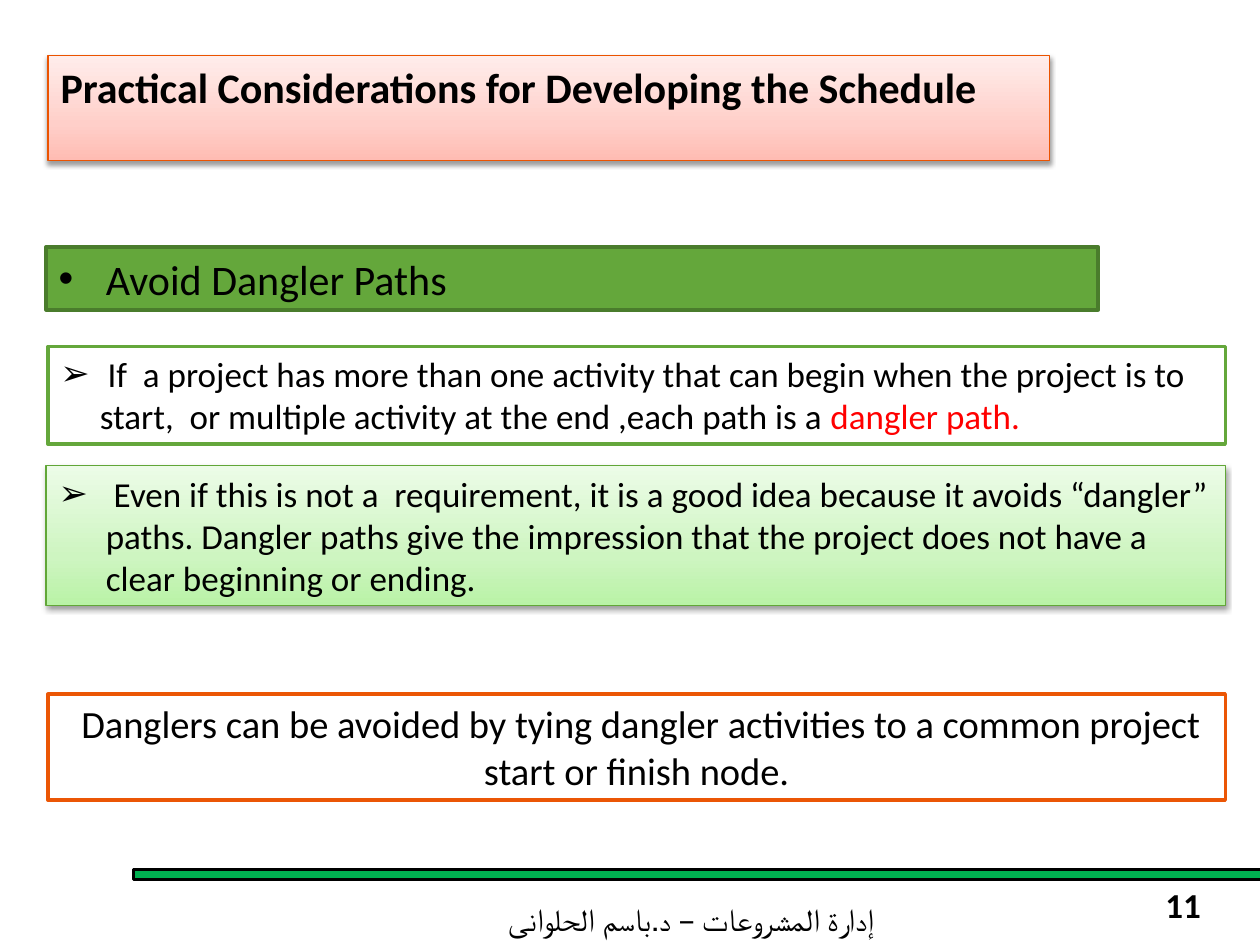
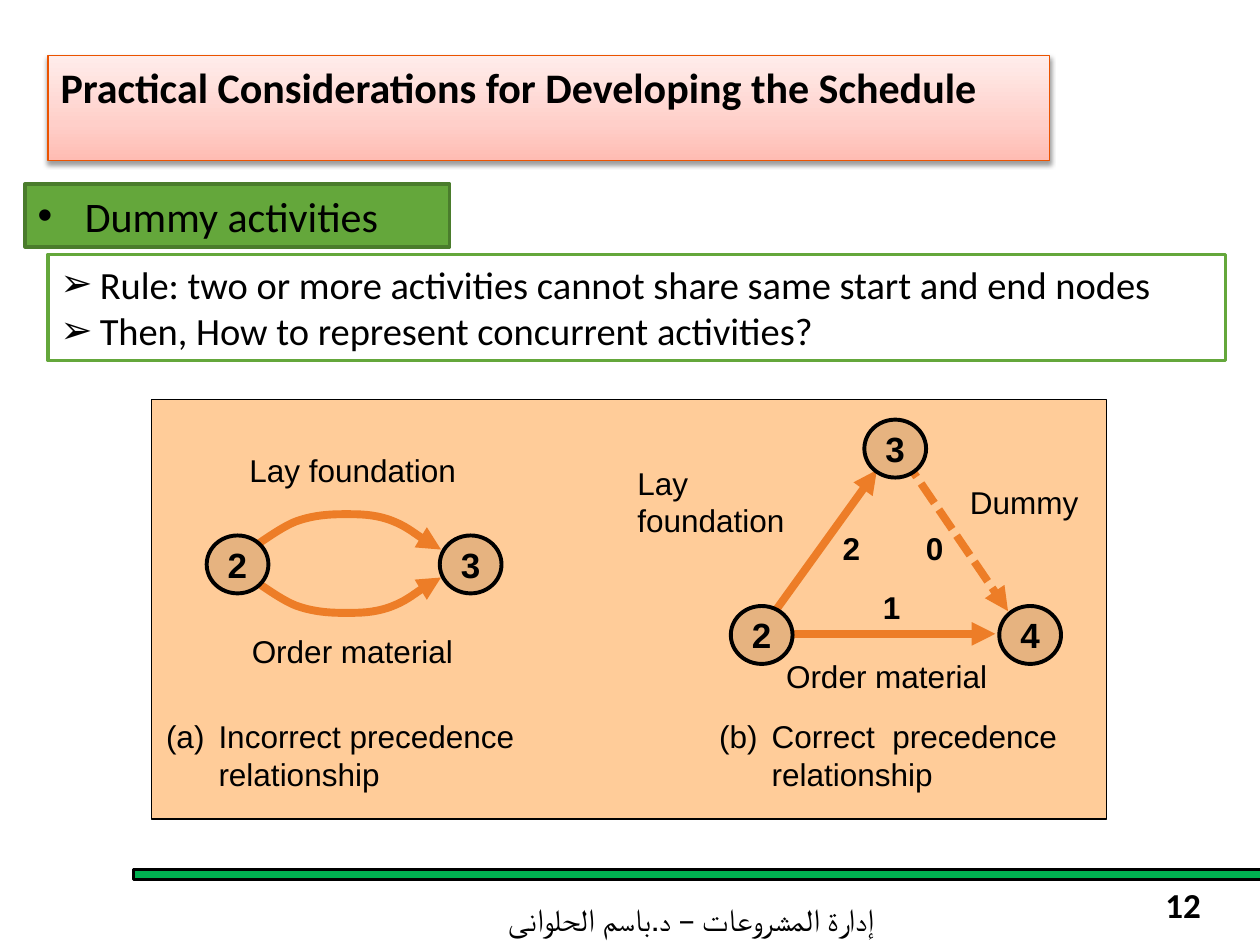
import copy
from dataclasses import dataclass

import pptx
import pptx.dml.color
import pptx.enum.dml
import pptx.enum.shapes
import pptx.enum.text
import pptx.oxml
import pptx.oxml.ns
import pptx.util
from lxml import etree

Pt = pptx.util.Pt
RGBColor = pptx.dml.color.RGBColor
qn = pptx.oxml.ns.qn
SHAPE = pptx.enum.shapes.MSO_SHAPE
ALIGN = pptx.enum.text.PP_ALIGN
ANCHOR = pptx.enum.text.MSO_ANCHOR
AUTO_SIZE = pptx.enum.text.MSO_AUTO_SIZE

BLACK = RGBColor(0x00, 0x00, 0x00)
WHITE = RGBColor(0xFF, 0xFF, 0xFF)
RED = RGBColor(0xFF, 0x00, 0x00)
BAND_GREEN = RGBColor(0x00, 0xB0, 0x50)
GREEN = RGBColor(0x64, 0xA7, 0x3B)
DARK_GREEN = RGBColor(0x4A, 0x7C, 0x2C)
SOFT_GREEN = RGBColor(0x61, 0xA6, 0x37)
TITLE_ORANGE = RGBColor(0xEB, 0x53, 0x00)
ORANGE = RGBColor(0xEB, 0x56, 0x05)
ARROW_ORANGE = RGBColor(0xED, 0x7D, 0x27)
PANEL_PEACH = RGBColor(0xFF, 0xCC, 0x99)
NODE_TAN = RGBColor(0xE6, 0xB3, 0x80)
PINK_FADE = (RGBColor(0xFF, 0xBC, 0xB3), RGBColor(0xFF, 0xCF, 0xC9), RGBColor(0xFF, 0xED, 0xEB))
GREEN_FADE = (RGBColor(0xB9, 0xF2, 0xA6), RGBColor(0xCE, 0xF5, 0xC1), RGBColor(0xEC, 0xFC, 0xE7))
FADE_POSITIONS = (0, 0.35, 1)

TITLE = "Practical Considerations for Developing the Schedule"
FOOTER = "إدارة المشروعات – د.باسم الحلوانى"
BODY_FONT, DIAGRAM_FONT = "Calibri", "Arial"
NODE_WIDTH, NODE_HEIGHT = 35.3, 33.1


@dataclass
class Box:
    left: float
    top: float
    width: float
    height: float
    lines: tuple[str, ...]
    size: float
    fill: RGBColor | tuple[RGBColor, ...] = WHITE
    border: RGBColor = GREEN
    border_width: float = 2
    bullet: str = ""
    indent: float = 0
    level: int = 0
    align: ALIGN = ALIGN.LEFT
    highlight: str = ""


@dataclass
class Label:
    left: float
    top: float
    width: float
    height: float
    lines: tuple[str, ...]
    size: float = 18
    font: str = DIAGRAM_FONT
    bold: bool = False
    wrap: bool = False
    indent: float = 0
    align: ALIGN = ALIGN.LEFT
    anchor: ANCHOR = ANCHOR.TOP
    rtl: bool = False


@dataclass
class Node:
    left: float
    top: float
    number: str


@dataclass
class Arrow:
    start: tuple[float, float]
    end: tuple[float, float]
    dotted: bool = False


def box_heading(left: float, top: float, width: float, text: str) -> Box:
    return Box(left, top, width, 36, (text,), 24, GREEN, DARK_GREEN, bullet="•", indent=27)


DANGLER_BOXES = (
    box_heading(26.4, 141.1, 601.2, "Avoid Dangler Paths"),
    Box(26.4, 266.2, 673.9, 80, (
        " Even if this is not a  requirement, it is a good idea because it avoids “dangler” paths. "
        "Dangler paths give the impression that the project does not have a clear beginning or ending.",),
        20, GREEN_FADE, SOFT_GREEN, 0.75, "➢", 27),
    Box(27.4, 198, 672.8, 55.7, (
        " If  a project has more than one activity that can begin when the project is to start,  "
        "or multiple activity at the end ,each path is a ",),
        20, bullet="➢", indent=22.5, highlight="dangler path."),
    Box(27.4, 396.7, 672.8, 60.6, (
        " Danglers can be avoided by tying dangler activities to a common project "
        "start or finish node.",), 22, border=ORANGE, align=ALIGN.CENTER),
)
DUMMY_BOXES = (
    box_heading(14.4, 105.1, 242.6, "Dummy activities"),
    Box(27.4, 145.4, 672.8, 60.6, (
        "Rule: two or more activities cannot share same start and end nodes",
        "Then, How to represent concurrent activities?"),
        22, bullet="➢", indent=22.5, level=1),
)

# Start point, then three points for each Bézier segment
UPPER_CURVE = (
    (142.5, 314), (147, 311.5), (160, 301.5), (169, 298), (178.5, 294.5), (188, 293.8),
    (196.5, 293.8), (206, 293.8), (213, 293.8), (222.5, 297), (232, 300.5), (245.5, 311), (252, 314),
)
LOWER_CURVE = tuple((x, 644 - y) for x, y in UPPER_CURVE)
ARROWS = (
    Arrow((437.8, 356.4), (501.1, 268.6)),
    Arrow((516.2, 261.4), (576, 349.2), dotted=True),
    Arrow((442.1, 362.2), (568.8, 362.2)),
)
NODES = (
    Node(118.1, 306, "2"), Node(251.3, 306, "3"),
    Node(493.9, 239.8, "3"), Node(571, 346.3, "4"), Node(417.6, 346.3, "2"),
)
DIAGRAM_LABELS = (
    Label(135.4, 254.2, 133.2, 28.8, ("Lay foundation",)),
    Label(136.8, 357.8, 130.3, 28.8, ("Order material",)),
    Label(87.8, 406.1, 229, 50.4, ("(a)\tIncorrect precedence relationship",), wrap=True, indent=30),
    Label(403.9, 406.1, 219.6, 50.4, ("(b)\tCorrect  precedence relationship",), wrap=True, indent=30),
    Label(547.2, 272.2, 77, 28.8, ("Dummy",)),
    Label(357.1, 261.4, 99.4, 50.4, ("Lay", "foundation")),
    Label(442.1, 372.2, 130.3, 28.8, ("Order material",)),
    Label(497.5, 332.6, 24.5, 28.8, ("1",), bold=True),
    Label(474.5, 298.8, 24.5, 28.8, ("2",), bold=True),
    Label(522, 298.8, 24.5, 28.8, ("0",), bold=True),
)


def set_font(font, name: str, size: float, bold: bool = False) -> None:
    font.name, font.size, font.bold = name, Pt(size), bold
    font.color.rgb = BLACK


def hang(paragraph, indent: float, bullet: str = "") -> None:
    """Give the paragraph a hanging indent and, if asked, a bullet."""
    properties = paragraph._p.get_or_add_pPr()
    properties.set("marL", str(Pt(indent)))
    properties.set("indent", str(-Pt(indent)))
    if bullet:
        etree.SubElement(properties, qn("a:buFont")).set("typeface", "Arial")
        etree.SubElement(properties, qn("a:buChar")).set("char", bullet)


def fade(shape, colors: tuple[RGBColor, ...]) -> None:
    """Fill with a bottom-to-top gradient and cast a soft shadow."""
    shape.fill.gradient()
    shape.fill.gradient_angle = 90
    stops = shape._element.spPr.find(".//" + qn("a:gsLst"))
    stops.append(copy.deepcopy(stops[0]))
    for stop, color, position in zip(shape.fill.gradient_stops, colors, FADE_POSITIONS):
        stop.color.rgb, stop.position = color, position
    effects = shape._element.spPr.find(qn("a:effectLst"))
    shadow = etree.SubElement(effects, qn("a:outerShdw"), blurRad=str(Pt(3.1)), dist=str(Pt(1.6)),
                              dir="5400000", rotWithShape="0")
    tint = etree.SubElement(shadow, qn("a:srgbClr"), val=str(BLACK))
    etree.SubElement(tint, qn("a:alpha"), val="38000")


def paint(shape, fill: RGBColor | tuple[RGBColor, ...], border: RGBColor, width: float) -> None:
    shape.line.color.rgb, shape.line.width = border, Pt(width)
    shape.shadow.inherit = False
    if isinstance(fill, RGBColor):
        shape.fill.solid()
        shape.fill.fore_color.rgb = fill
    else:
        fade(shape, fill)


def add_filled(shapes, kind: SHAPE, place: tuple[float, ...],
               fill: RGBColor | tuple[RGBColor, ...], border: RGBColor, width: float):
    shape = shapes.add_shape(kind, *map(Pt, place))
    paint(shape, fill, border, width)
    return shape


def add_box(shapes, box: Box) -> None:
    shape = add_filled(shapes, SHAPE.RECTANGLE, (box.left, box.top, box.width, box.height),
                       box.fill, box.border, box.border_width)
    frame = shape.text_frame
    frame.word_wrap, frame.vertical_anchor = True, ANCHOR.TOP
    frame.auto_size = AUTO_SIZE.SHAPE_TO_FIT_TEXT
    frame.text = "\n".join(box.lines)
    for paragraph in frame.paragraphs:
        paragraph.alignment, paragraph.level = box.align, box.level
        if box.bullet:
            hang(paragraph, box.indent, box.bullet)
        if box.highlight:
            paragraph.add_run().text = box.highlight
        for run in paragraph.runs:
            set_font(run.font, BODY_FONT, box.size)
    if box.highlight:
        frame.paragraphs[-1].runs[-1].font.color.rgb = RED


def add_label(shapes, label: Label) -> None:
    frame = shapes.add_textbox(*map(Pt, (label.left, label.top, label.width, label.height))).text_frame
    frame.word_wrap, frame.vertical_anchor = label.wrap, label.anchor
    frame.text = "\n".join(label.lines)
    for paragraph in frame.paragraphs:
        paragraph.alignment = label.align
        if label.indent:
            hang(paragraph, label.indent)
        if label.rtl:
            paragraph._p.get_or_add_pPr().set("rtl", "1")
        set_font(paragraph.runs[0].font, label.font, label.size, label.bold)


def style_arrow(line) -> None:
    line.color.rgb, line.width = ARROW_ORANGE, Pt(4.5)


def add_arrowhead(line) -> None:
    etree.SubElement(line._get_or_add_ln(), qn("a:tailEnd"), type="triangle")


def add_arrow(shapes, arrow: Arrow) -> None:
    connector = shapes.add_connector(pptx.enum.shapes.MSO_CONNECTOR.STRAIGHT,
                                     *map(Pt, arrow.start + arrow.end))
    style_arrow(connector.line)
    if arrow.dotted:
        connector.line.dash_style = pptx.enum.dml.MSO_LINE.SQUARE_DOT
    add_arrowhead(connector.line)
    etree.SubElement(connector._element.spPr, qn("a:effectLst"))


def add_curve(shapes, points: tuple[tuple[float, float], ...]) -> None:
    """Draw an arrow along Bézier segments, three points to a segment."""
    start, *rest = [(Pt(x), Pt(y)) for x, y in points]
    builder = shapes.build_freeform(*start)
    builder.add_line_segments(rest, close=False)
    curve = builder.convert_to_shape()
    outline = curve._element.spPr.find(".//" + qn("a:path"))
    steps = outline.findall(qn("a:lnTo"))
    for first in range(0, len(steps), 3):
        segment = etree.SubElement(outline, qn("a:cubicBezTo"))
        for step in steps[first:first + 3]:
            segment.append(step[0])
            outline.remove(step)
    curve.fill.background()
    style_arrow(curve.line)
    add_arrowhead(curve.line)
    curve.shadow.inherit = False


def add_node(shapes, node: Node) -> None:
    circle = add_filled(shapes, SHAPE.OVAL, (node.left, node.top, NODE_WIDTH, NODE_HEIGHT),
                        NODE_TAN, BLACK, 2.25)
    frame = circle.text_frame
    frame.word_wrap, frame.vertical_anchor = False, ANCHOR.MIDDLE
    frame.text = node.number
    frame.paragraphs[0].alignment = ALIGN.CENTER
    set_font(frame.paragraphs[0].runs[0].font, DIAGRAM_FONT, 20, True)


def add_precedence_diagram(slide) -> None:
    shapes = slide.shapes.add_group_shape().shapes
    add_filled(shapes, SHAPE.RECTANGLE, (86.4, 228.2, 545.8, 239.8), PANEL_PEACH, BLACK, 0.75)
    for curve in (LOWER_CURVE, UPPER_CURVE):
        add_curve(shapes, curve)
    for arrow in ARROWS:
        add_arrow(shapes, arrow)
    for node in NODES:
        add_node(shapes, node)
    for label in DIAGRAM_LABELS:
        add_label(shapes, label)


def add_lecture_slide(deck, number: int, boxes: tuple[Box, ...]):
    slide = deck.slides.add_slide(deck.slide_layouts[5])
    title = slide.shapes.title
    title.left, title.top, title.width, title.height = map(Pt, (27.4, 31.7, 572.4, 36))
    paint(title, PINK_FADE, TITLE_ORANGE, 0.75)
    frame = title.text_frame
    frame.text = TITLE
    frame.word_wrap, frame.vertical_anchor = True, ANCHOR.TOP
    frame.auto_size = AUTO_SIZE.SHAPE_TO_FIT_TEXT
    frame.paragraphs[0].alignment = ALIGN.LEFT
    set_font(frame.paragraphs[0].runs[0].font, BODY_FONT, 24, True)

    add_filled(slide.shapes, SHAPE.RECTANGLE, (76.3, 496.8, 645.8, 5.8), BAND_GREEN, BLACK, 2)
    centred = dict(font=BODY_FONT, wrap=True, align=ALIGN.CENTER, anchor=ANCHOR.MIDDLE)
    add_label(slide.shapes, Label(236.2, 510.5, 317.5, 28.8, (FOOTER,), rtl=True, **centred))
    add_label(slide.shapes, Label(637.9, 502.6, 76.3, 28.8, (str(number),), 20, bold=True, **centred))
    for box in boxes:
        add_box(slide.shapes, box)
    return slide


def main() -> None:
    deck = pptx.Presentation()
    deck.slide_width, deck.slide_height = Pt(720), Pt(540)
    add_lecture_slide(deck, 11, DANGLER_BOXES)
    add_precedence_diagram(add_lecture_slide(deck, 12, DUMMY_BOXES))
    deck.save("out.pptx")


if __name__ == "__main__":
    main()
